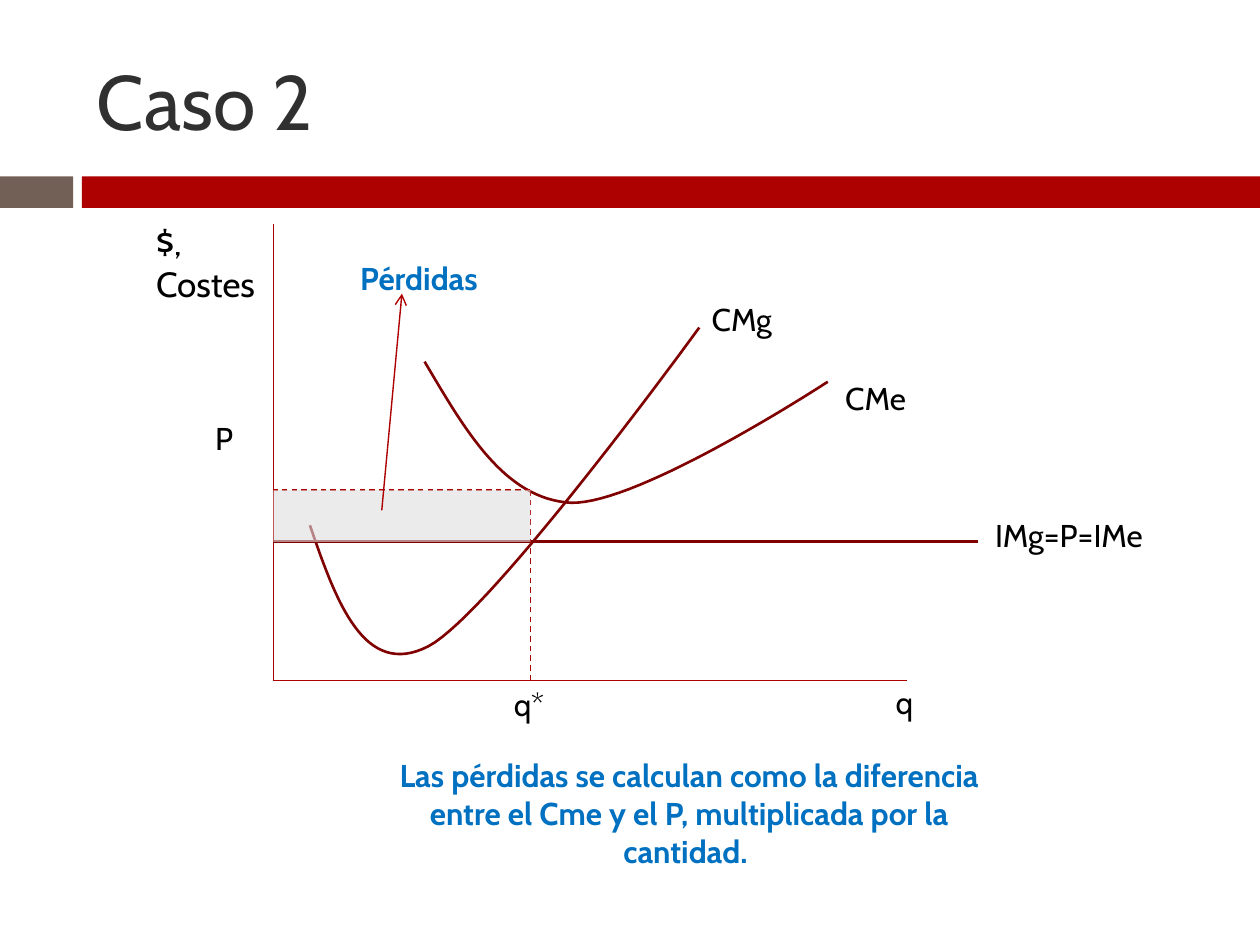
from lxml import etree
from pptx import Presentation
from pptx.dml.color import RGBColor
from pptx.enum.dml import MSO_LINE
from pptx.enum.shapes import MSO_CONNECTOR, MSO_SHAPE
from pptx.enum.text import MSO_ANCHOR as Anchor, PP_ALIGN as Align
from pptx.oxml.ns import qn
from pptx.util import Inches, Pt

RED = RGBColor(0xAD, 0x01, 0x01)
DARK_RED = RGBColor(0x80, 0x01, 0x01)
BROWN = RGBColor(0x72, 0x60, 0x56)
GREY = RGBColor(0xDE, 0xDE, 0xE0)
CHARCOAL = RGBColor(0x30, 0x30, 0x30)
BLUE = RGBColor(0x00, 0x70, 0xC0)
BLACK = RGBColor(0x00, 0x00, 0x00)

THIN, THICK = 0.79, 1.5
ORIGIN_X, ORIGIN_Y = 2.17, 5.4
QUANTITY = 4.21
PRICE, AVERAGE_COST = 4.3, 3.89


def bezier(start, control_1, control_2, end, steps=32):
    """Return the points of a cubic curve, without its start."""
    points = []
    for step in range(1, steps + 1):
        t = step / steps
        weights = ((1 - t) ** 3, 3 * t * (1 - t) ** 2, 3 * t * t * (1 - t), t ** 3)
        corners = (start, control_1, control_2, end)
        points.append(tuple(sum(w * c[axis] for w, c in zip(weights, corners))
                            for axis in (0, 1)))
    return points


class Board:
    font = "Cabin"

    def __init__(self, slide):
        self.shapes = slide.shapes

    def text(self, words, left, top, width, height, size=18, color=BLACK,
             bold=False, align=Align.LEFT, anchor=Anchor.TOP, before=0):
        frame = self.shapes.add_textbox(
            Inches(left), Inches(top), Inches(width), Inches(height)).text_frame
        frame.word_wrap = True
        frame.vertical_anchor = anchor
        paragraph = frame.paragraphs[0]
        paragraph.alignment = align
        paragraph.space_before = Pt(before)
        run = paragraph.add_run()
        run.text = words
        run.font.name = self.font
        run.font.size = Pt(size)
        run.font.bold = bold
        run.font.color.rgb = color

    def block(self, left, top, width, height, color, opacity=100):
        block = self.shapes.add_shape(
            MSO_SHAPE.RECTANGLE, Inches(left), Inches(top), Inches(width), Inches(height))
        block.shadow.inherit = False
        block.fill.solid()
        block.fill.fore_color.rgb = color
        block.line.fill.background()
        if opacity < 100:
            tone = block.fill._xPr.find(".//" + qn("a:srgbClr"))
            etree.SubElement(tone, qn("a:alpha"), val=str(opacity * 1000))

    def line(self, start, end, color=RED, weight=THIN, dashed=False, arrow=False):
        line = self.shapes.add_connector(
            MSO_CONNECTOR.STRAIGHT, *(Inches(v) for v in (*start, *end)))
        line.line.color.rgb = color
        line.line.width = Pt(weight)
        if dashed:
            line.line.dash_style = MSO_LINE.DASH
        if arrow:
            etree.SubElement(line.line._get_or_add_ln(), qn("a:tailEnd"), type="arrow")
        etree.SubElement(line._element.spPr, qn("a:effectLst"))

    def curve(self, start, *segments):
        """Draw joined cubic curves; each segment is two controls and an end."""
        points = [start]
        for segment in segments:
            points += bezier(points[-1], *segment)
        first, *rest = [(Inches(x), Inches(y)) for x, y in points]
        builder = self.shapes.build_freeform(*first)
        builder.add_line_segments(rest, close=False)
        curve = builder.convert_to_shape()
        curve.shadow.inherit = False
        curve.fill.background()
        curve.line.color.rgb = DARK_RED
        curve.line.width = Pt(THICK)


def main():
    deck = Presentation()
    deck.slide_width, deck.slide_height = Inches(10), Inches(7.5)
    board = Board(deck.slides.add_slide(deck.slide_layouts[6]))

    board.block(0, 1.4, 0.58, 0.25, BROWN)
    board.block(0.65, 1.4, 9.35, 0.25, RED)
    board.text("Caso 2", 0.67, 0.25, 8.92, 1.08, 44, CHARCOAL, anchor=Anchor.MIDDLE)

    # Axes
    board.line((ORIGIN_X, 1.78), (ORIGIN_X, ORIGIN_Y))
    board.line((ORIGIN_X, ORIGIN_Y), (7.2, ORIGIN_Y))
    board.text("$, Costes", 1.14, 1.7, 1.1, 0.77, 20, before=7)

    # Marginal cost, average cost and price
    board.curve((2.46, 4.17),
                ((2.67, 4.78), (2.89, 5.39), (3.4, 5.13)),
                ((3.91, 4.86), (5.55, 2.6), (5.55, 2.6)))
    board.curve((3.37, 2.87),
                ((3.69, 3.41), (4, 3.96), (4.53, 3.99)),
                ((5.07, 4.01), (6.57, 3.03), (6.57, 3.03)))
    board.line((7.76, PRICE), (ORIGIN_X, PRICE), DARK_RED, THICK)

    for label, left, top, width in (
            ("CMg", 5.55, 2.33, 1.06),
            ("CMe", 6.61, 2.96, 1.06),
            ("q", 7.01, 5.37, 1.06),
            ("P", 1.61, 3.28, 0.85),
            ("q*", 3.98, 5.39, 0.67),
            ("IMg=P=IMe", 7.8, 4.05, 1.54)):
        board.text(label, left, top, width, 0.4)

    # Loss area
    for end in ((QUANTITY, ORIGIN_Y), (ORIGIN_X, AVERAGE_COST)):
        board.line((QUANTITY, AVERAGE_COST), end, dashed=True)
    board.block(ORIGIN_X, AVERAGE_COST, QUANTITY - ORIGIN_X, PRICE - AVERAGE_COST,
                GREY, opacity=60)
    board.line((3.03, 4.05), (3.19, 2.33), arrow=True)
    board.text("Pérdidas", 2.76, 2.01, 1.22, 0.4, color=BLUE, bold=True)
    board.text("Las pérdidas se calculan como la diferencia entre el Cme y el P, "
               "multiplicada por la cantidad. ",
               2.95, 5.95, 5.04, 1.01, color=BLUE, bold=True, align=Align.CENTER)

    deck.save("out.pptx")


if __name__ == "__main__":
    main()
